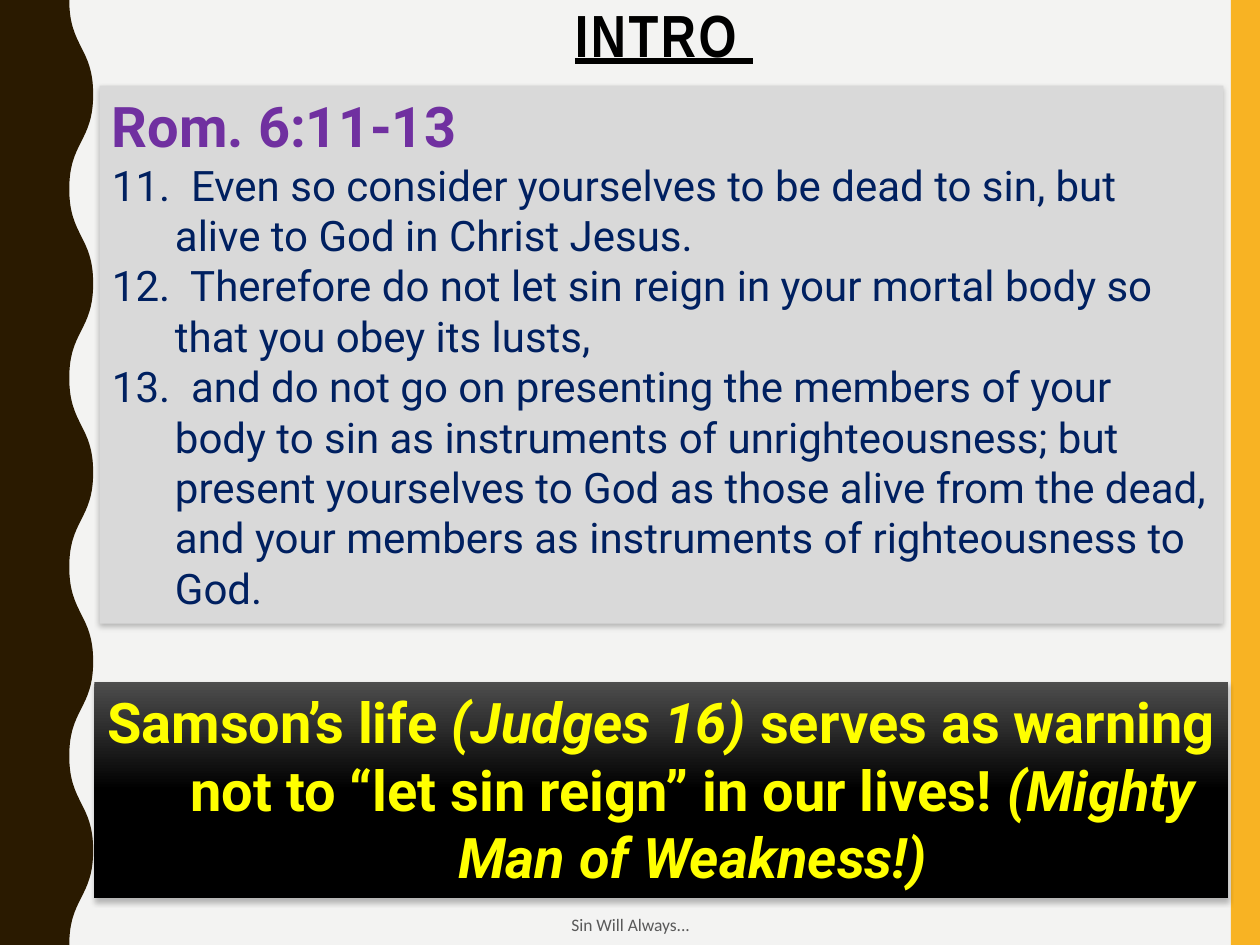
from copy import deepcopy
from itertools import pairwise

from pptx import Presentation
from pptx.dml.color import RGBColor
from pptx.enum.shapes import MSO_SHAPE as SHAPE
from pptx.enum.text import MSO_ANCHOR as ANCHOR, MSO_AUTO_SIZE as AUTO, PP_ALIGN as ALIGN
from pptx.oxml import parse_xml
from pptx.oxml.ns import nsdecls, qn
from pptx.util import Emu, Pt

PX = 9144
WIDTH, HEIGHT = 1000, 750
PAPER = RGBColor(0xF3, 0xF3, 0xF2)
GOLD = RGBColor(0xF8, 0xB3, 0x23)
BROWN = RGBColor(0x2A, 0x1A, 0x00)
BLACK = RGBColor(0x00, 0x00, 0x00)
CHARCOAL = RGBColor(0x4D, 0x4D, 0x4D)
GRAY = RGBColor(0x59, 0x59, 0x59)
SILVER = RGBColor(0xD9, 0xD9, 0xD9)
PURPLE = RGBColor(0x70, 0x30, 0xA0)
NAVY = RGBColor(0x00, 0x20, 0x60)
YELLOW = RGBColor(0xFF, 0xFF, 0x00)

VERSES = [
    "11.  Even so consider yourselves to be dead to sin, but alive to God in Christ Jesus.",
    "12.  Therefore do not let sin reign in your mortal body so that you obey its lusts,",
    "13.  and do not go on presenting the members of your body to sin as instruments of "
    "unrighteousness; but present yourselves to God as those alive from the dead, and your "
    "members as instruments of righteousness to God.",
]
WARNING = [
    ("Samson’s life ", False),
    ("(Judges 16) ", True),
    ("serves as warning not to “let sin reign” in our lives! ", False),
    ("(Mighty Man of Weakness!)", True),
]


def px(*lengths):
    """Turn px lengths into EMU."""
    return [Emu(n * PX) for n in lengths]


def style(p, name, size, color, bold=False):
    """Set the font of a whole paragraph."""
    p.font.name, p.font.size, p.font.bold = name, Pt(size), bold
    p.font.color.rgb = color


def hang(p):
    """Give a paragraph a half-inch hanging indent."""
    indent = 50 * PX
    pPr = p._p.get_or_add_pPr()
    pPr.set("marL", str(indent))
    pPr.set("indent", str(-indent))


def finish(sp, color):
    """Give a shape a plain fill and no line or shadow."""
    sp.fill.solid()
    sp.fill.fore_color.rgb = color
    sp.line.fill.background()
    sp.shadow.inherit = False


def add_panel(s, box, color):
    """Add a text panel with a soft shadow below it."""
    sp = s.shapes.add_shape(SHAPE.RECTANGLE, *px(*box))
    finish(sp, color)
    effects = sp._element.spPr.find(qn("a:effectLst"))
    effects.append(parse_xml(
        f'<a:outerShdw {nsdecls("a")} blurRad="38100" dist="25400" dir="5400000" '
        'algn="t" rotWithShape="0"><a:srgbClr val="000000"><a:alpha val="25000"/>'
        '</a:srgbClr></a:outerShdw>'))
    tf = sp.text_frame
    tf.word_wrap, tf.auto_size = True, AUTO.SHAPE_TO_FIT_TEXT
    tf.vertical_anchor = ANCHOR.TOP
    return sp


def add_line(s, box, text, anchor):
    """Add a one-line centred text box and return its paragraph."""
    tf = s.shapes.add_textbox(*px(*box)).text_frame
    tf.word_wrap, tf.vertical_anchor = True, anchor
    p = tf.paragraphs[0]
    p.text, p.alignment = text, ALIGN.CENTER
    return p


def add_wave(s, box, waves=5, depth=19):
    """Draw the left band with a wavy right edge."""
    left, top, width, height = box
    half = height // (2 * waves)
    edge = [(left + width - depth * (1 - i % 2), top + half * i) for i in range(2 * waves + 1)]
    fb = s.shapes.build_freeform(*px(left, top))
    fb.add_line_segments([px(*point) for point in [*edge, (left, top + height)]])
    sp = fb.convert_to_shape()
    finish(sp, BROWN)
    lines = sp._element.findall(".//" + qn("a:lnTo"))
    for before, line in pairwise(lines[:-1]):
        start, end = before[-1], line[-1]
        middle = (int(start.get("y")) + int(end.get("y"))) // 2
        line.tag = qn("a:cubicBezTo")
        for k, point in enumerate((start, end)):
            control = deepcopy(point)
            control.set("y", str(middle))
            line.insert(k, control)


def add_stripe(s, box):
    """Draw the gold stripe on the right."""
    finish(s.shapes.add_shape(SHAPE.RECTANGLE, *px(*box)), GOLD)


def add_title(s, box):
    """Write the underlined slide title."""
    p = add_line(s, box, "INTRO ", ANCHOR.TOP)
    style(p, "Arial Narrow", 34, BLACK, True)
    p.font.underline, p.line_spacing = True, 0.9
    p.runs[0]._r.get_or_add_rPr().set("spc", "150")


def add_footer(s, box):
    """Write the footer."""
    style(add_line(s, box, "Sin Will Always...", ANCHOR.MIDDLE), "Calibri", 10, GRAY)


def add_scripture(s, box):
    """Write the scripture panel: reference, then verses."""
    tf = add_panel(s, box, SILVER).text_frame
    for i, text in enumerate(["Rom. 6:11-13", *VERSES]):
        p = tf.add_paragraph() if i else tf.paragraphs[0]
        p.text, p.alignment = text, ALIGN.LEFT
        hang(p)
        if i:
            style(p, "Roboto", 24, NAVY)
        else:
            style(p, "Roboto", 32, PURPLE, True)


def add_warning(s, box):
    """Write the closing warning on a dark gradient."""
    sp = add_panel(s, box, BLACK)
    sp.fill.gradient()
    sp.fill.gradient_angle = 270
    for stop, color, position in zip(sp.fill.gradient_stops, (CHARCOAL, BLACK), (0, 0.5)):
        stop.color.rgb, stop.position = color, position
    p = sp.text_frame.paragraphs[0]
    p.alignment = ALIGN.CENTER
    hang(p)
    style(p, "Roboto", 32, YELLOW, True)
    for text, italic in WARNING:
        r = p.add_run()
        r.text, r.font.italic = text, italic


def main():
    """Build the slide and save it."""
    prs = Presentation()
    prs.slide_width, prs.slide_height = px(WIDTH, HEIGHT)
    s = prs.slides.add_slide(prs.slide_layouts[6])
    s.background.fill.solid()
    s.background.fill.fore_color.rgb = PAPER
    add_stripe(s, (977, 0, 23, HEIGHT))
    add_wave(s, (0, 0, 74, HEIGHT))
    add_title(s, (79, 0, 896, 67))
    add_footer(s, (342, 717, 317, 33))
    add_scripture(s, (79, 68, 892, 427))
    add_warning(s, (75, 541, 900, 172))
    prs.save("out.pptx")


if __name__ == "__main__":
    main()
